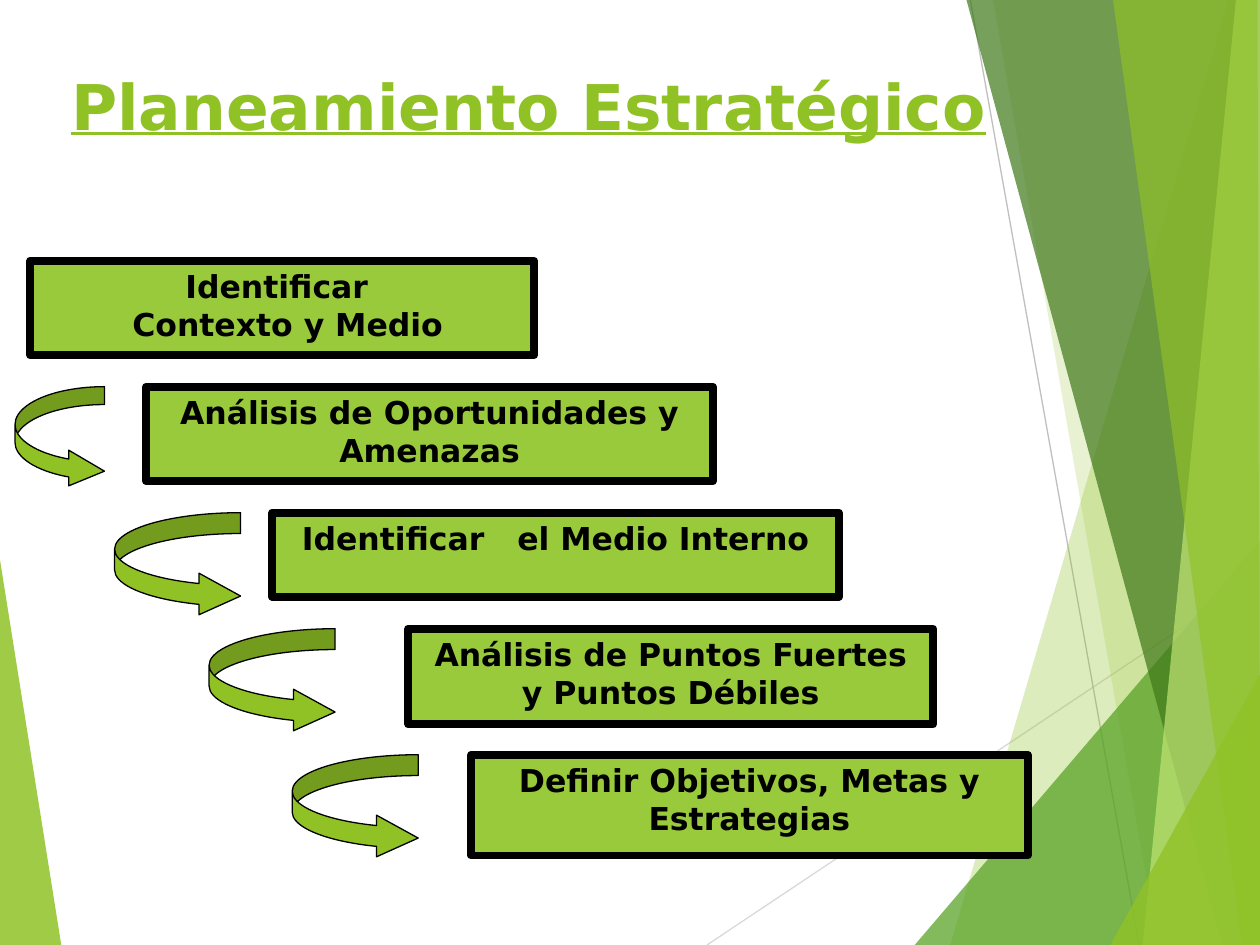
from lxml import etree
from pptx import Presentation
from pptx.dml.color import RGBColor
from pptx.enum import shapes, text
from pptx.oxml import ns
from pptx.util import Pt

WIDTH, HEIGHT = 720, 540
FONT = "DejaVu Sans"
GREEN, STEP_GREEN, BLACK = "90C226", "99CA3C", "000000"

TITLE = "Planeamiento Estratégico"

# step: label, box (left, top, width, height), arrow (left, width, height)
STEPS = [
    ("Identificar \n Contexto y Medio", (17.3, 149, 288, 54), None),
    ("Análisis de Oportunidades y Amenazas", (83.5, 221, 324, 54), (8.6, 51.1, 58.5)),
    ("Identificar   el Medio Interno", (155.5, 293, 324, 48), (65.5, 72, 59.5)),
    ("Análisis de Puntos Fuertes y Puntos Débiles", (233.3, 359.3, 300, 54.7), (119.5, 72, 59.5)),
    ("Definir Objetivos, Metas y Estrategias", (269.3, 431.3, 318, 57.6), (167, 72, 59.5)),
]

RAYS = [
    ("D9D9D9", (404, HEIGHT), (WIDTH, 329)),
    ("BFBFBF", (554.5, 0), (651, HEIGHT)),
]

# facet: colour, opacity in percent, corners
FACETS = [
    (GREEN, 85, [(0, 320), (35, HEIGHT), (0, HEIGHT)]),
    (GREEN, 30, [(702, 0), (543, HEIGHT), (WIDTH, HEIGHT), (WIDTH, 0)]),
    (GREEN, 20, [(567.5, 0), (661.7, HEIGHT), (WIDTH, HEIGHT), (WIDTH, 0)]),
    ("54A021", 72, [(522.7, HEIGHT), (WIDTH, 309), (WIDTH, HEIGHT)]),
    ("3F7819", 70, [(552.3, 0), (698.4, HEIGHT), (WIDTH, HEIGHT), (WIDTH, 0)]),
    ("C0E474", 70, [(706.3, 0), (653, HEIGHT), (WIDTH, HEIGHT), (WIDTH, 0)]),
    (GREEN, 65, [(636, 0), (709.9, HEIGHT), (WIDTH, HEIGHT), (718.6, 0)]),
    (GREEN, 80, [(634.5, HEIGHT), (WIDTH, 385.5), (WIDTH, HEIGHT)]),
]


def rgb(value):
    return RGBColor.from_string(value)


def paint(shape, fill, line_width=None):
    shape.shadow.inherit = False
    shape.fill.solid()
    shape.fill.fore_color.rgb = rgb(fill)
    if line_width is None:
        shape.line.fill.background()
    else:
        shape.line.color.rgb = rgb(BLACK)
        shape.line.width = Pt(line_width)


def write(shape, words, size, color, align, underline=False):
    frame = shape.text_frame
    frame.word_wrap = True
    frame.vertical_anchor = text.MSO_ANCHOR.TOP
    frame.text = words
    for paragraph in frame.paragraphs:
        paragraph.alignment = align
        font = paragraph.runs[0].font
        font.name, font.size, font.bold = FONT, Pt(size), True
        font.underline = underline
        font.color.rgb = rgb(color)


def add_ray(slide, color, start, end):
    ray = slide.shapes.add_connector(
        shapes.MSO_CONNECTOR.STRAIGHT, *map(Pt, start + end))
    ray.line.color.rgb = rgb(color)
    ray.line.width = Pt(0.75)
    etree.SubElement(ray._element.spPr, ns.qn("a:effectLst"))


def add_facet(slide, color, opacity, corners):
    first, *others = [(Pt(x), Pt(y)) for x, y in corners]
    builder = slide.shapes.build_freeform(*first)
    builder.add_line_segments(others, close=True)
    facet = builder.convert_to_shape()
    paint(facet, color)
    fill_color = facet._element.spPr.find(".//" + ns.qn("a:srgbClr"))
    etree.SubElement(fill_color, ns.qn("a:alpha"), val=str(opacity * 1000))


def add_step(slide, label, box, arrow):
    step = slide.shapes.add_shape(shapes.MSO_SHAPE.RECTANGLE, *map(Pt, box))
    paint(step, STEP_GREEN, 4.5)
    write(step, label, 18, BLACK, text.PP_ALIGN.CENTER)
    if arrow:
        left, width, height = arrow
        turn = slide.shapes.add_shape(
            shapes.MSO_SHAPE.CURVED_RIGHT_ARROW, *map(Pt, (left, box[1], width, height)))
        paint(turn, GREEN, 0.75)
        for index, value in enumerate((0.2, 0.4, 0.4)):
            turn.adjustments[index] = value


def main():
    deck = Presentation()
    deck.slide_width, deck.slide_height = Pt(WIDTH), Pt(HEIGHT)
    slide = deck.slides.add_slide(deck.slide_layouts[6])
    for ray in RAYS:
        add_ray(slide, *ray)
    for facet in FACETS:
        add_facet(slide, *facet)
    heading = slide.shapes.add_textbox(*map(Pt, (8.6, 35.3, 579, 90.7)))
    write(heading, TITLE, 36, GREEN, text.PP_ALIGN.LEFT, underline=True)
    heading.text_frame.margin_left = Pt(32.2)
    for step in STEPS:
        add_step(slide, *step)
    deck.save("out.pptx")


if __name__ == "__main__":
    main()
